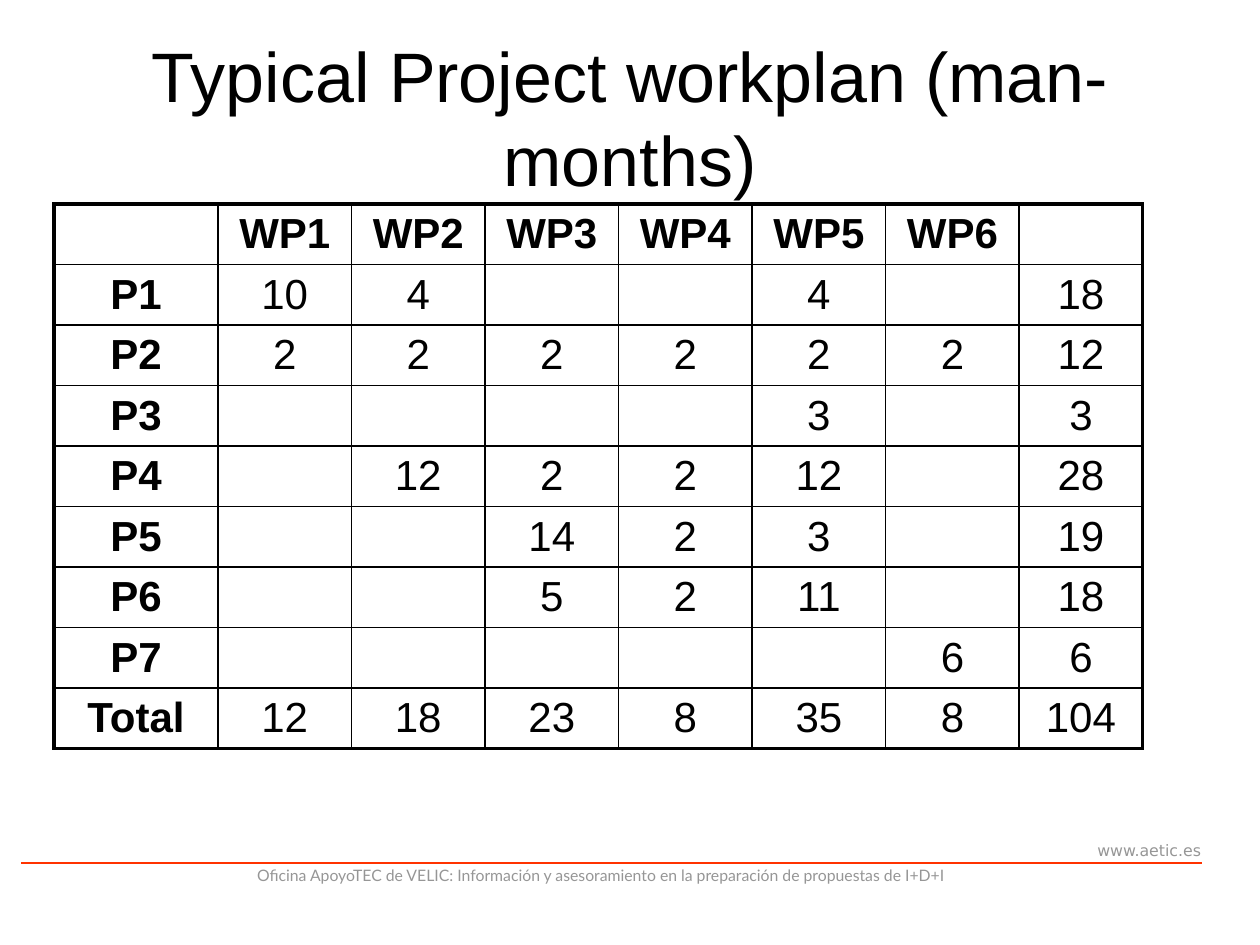
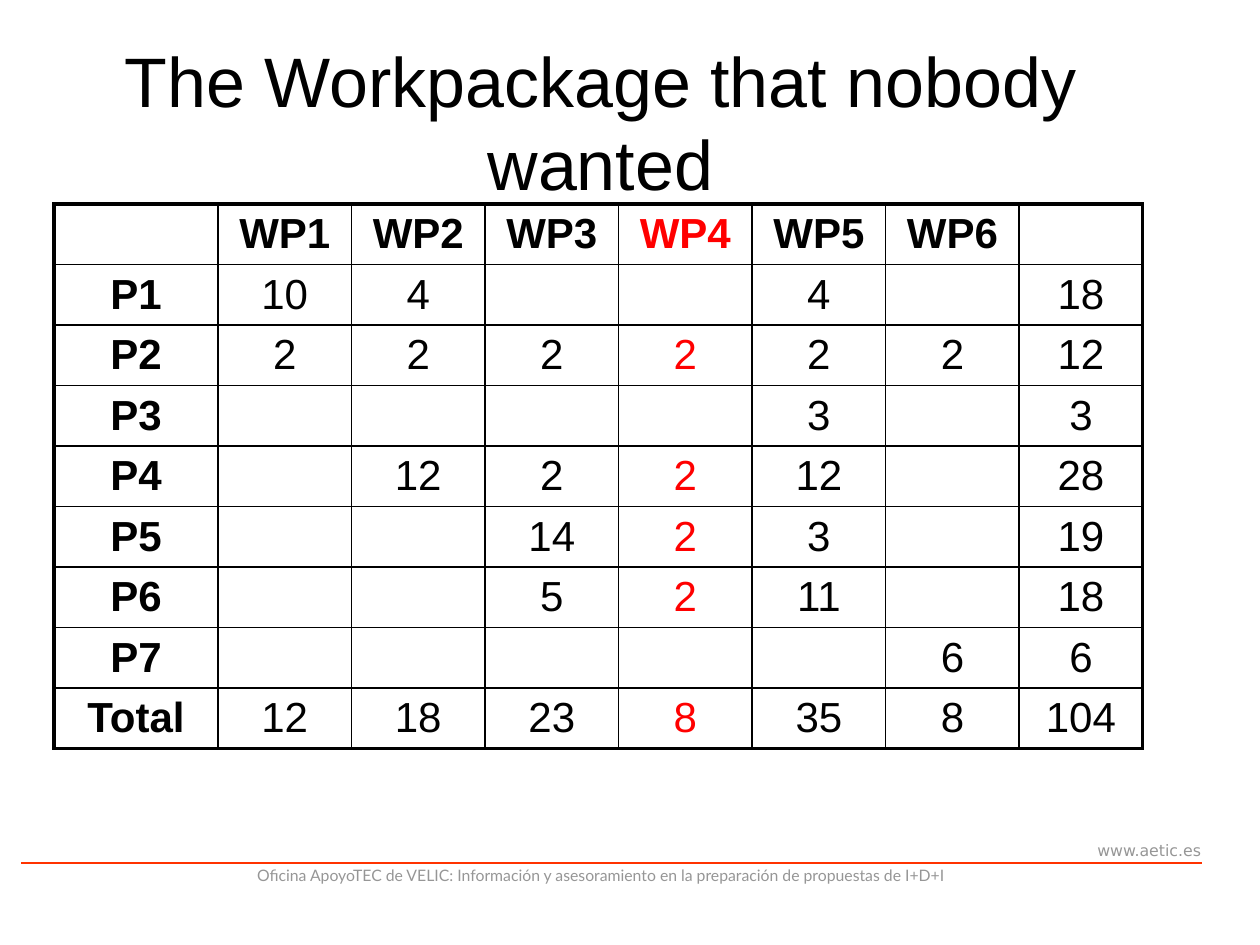
from lxml import etree
from pptx import Presentation
from pptx import util as u
from pptx.dml.color import RGBColor
from pptx.enum import shapes, text
from pptx.oxml.ns import qn

COLORS = {"ink": "000000", "highlight": "FF0000", "footer": "969696", "rule": "FF3300"}
FOOTERS = [
    ("www.aetic.es", (7.99, 6.62, 1.64, 0.25), "DejaVu Sans", text.PP_ALIGN.RIGHT),
    ("Oficina ApoyoTEC de VELIC: Información y asesoramiento en la preparación de propuestas de I+D+I",
     (1.51, 6.82, 6.51, 0.25), "Lato", text.PP_ALIGN.CENTER),
]
SLIDES = [
    ("Typical Project workplan (man-months)", (0.5, 0.3, 9, 1.25), None),
    ("The Workpackage that nobody wanted", (0.75, 0.17, 8.03, 1.58), "WP4"),
]
WORKPLAN = [
    ["", "WP1", "WP2", "WP3", "WP4", "WP5", "WP6", ""],
    ["P1", 10, 4, "", "", 4, "", 18],
    ["P2", 2, 2, 2, 2, 2, 2, 12],
    ["P3", "", "", "", "", 3, "", 3],
    ["P4", "", 12, 2, 2, 12, "", 28],
    ["P5", "", "", 14, 2, 3, "", 19],
    ["P6", "", "", 5, 2, 11, "", 18],
    ["P7", "", "", "", "", "", 6, 6],
    ["Total", 12, 18, 23, 8, 35, 8, 104],
]
COLUMN_WIDTHS = [1.3] + [1.06] * 6 + [0.98]
ROW_HEIGHT = 0.47
INNER_BORDER, OUTER_BORDER = 1, 2.25


def write(frame, words, font_name, size, color, align=text.PP_ALIGN.CENTER, bold=False):
    frame.word_wrap = True
    para = frame.paragraphs[0]
    para.text = words
    para.alignment = align
    para.font.size = u.Pt(size)
    for span in para.runs:
        span.font.name = font_name
        span.font.size = u.Pt(size)
        span.font.bold = bold
        span.font.color.rgb = RGBColor.from_string(COLORS[color])


def add_border(cell, side, points):
    properties = cell._tc.get_or_add_tcPr()
    line = etree.SubElement(properties, qn(f"a:ln{side}"), w=str(u.Pt(points)))
    fill = etree.SubElement(line, qn("a:solidFill"))
    etree.SubElement(fill, qn("a:srgbClr"), val=COLORS["ink"])


deck = Presentation()
deck.slide_width, deck.slide_height = u.Inches(10), u.Inches(7.5)

for title, title_area, highlighted in SLIDES:
    page = deck.slides.add_slide(deck.slide_layouts[6])

    rule = page.shapes.add_connector(
        shapes.MSO_CONNECTOR.STRAIGHT, u.Inches(0.17), u.Inches(6.85), u.Inches(9.54), u.Inches(6.85))
    rule.line.color.rgb = RGBColor.from_string(COLORS["rule"])
    rule.line.width = u.Pt(0.75)
    etree.SubElement(rule._element.spPr, qn("a:effectLst"))

    for words, area, font_name, align in FOOTERS:
        box = page.shapes.add_textbox(*map(u.Inches, area))
        write(box.text_frame, words, font_name, 9, "footer", align)

    box = page.shapes.add_textbox(*map(u.Inches, title_area))
    box.text_frame.vertical_anchor = text.MSO_ANCHOR.MIDDLE
    write(box.text_frame, title, "Arial", 40, "ink")

    last_row, last_column = len(WORKPLAN) - 1, len(COLUMN_WIDTHS) - 1
    table = page.shapes.add_table(
        len(WORKPLAN), len(COLUMN_WIDTHS), u.Inches(0.43), u.Inches(1.62),
        u.Inches(sum(COLUMN_WIDTHS)), u.Inches(ROW_HEIGHT * len(WORKPLAN))).table
    table.first_row = table.horz_banding = False
    for column, width in zip(table.columns, COLUMN_WIDTHS):
        column.width = u.Inches(width)

    for r, values in enumerate(WORKPLAN):
        table.rows[r].height = u.Inches(ROW_HEIGHT)
        for c, value in enumerate(values):
            cell = table.cell(r, c)
            cell.margin_top = cell.margin_bottom = u.Inches(0.04)
            cell.vertical_anchor = text.MSO_ANCHOR.MIDDLE
            color = "highlight" if WORKPLAN[0][c] == highlighted else "ink"
            write(cell.text_frame, str(value), "Arial", 24, color, bold=r == 0 or c == 0)
            edges = {"L": c == 0, "R": c == last_column, "T": r == 0, "B": r == last_row}
            for side, is_outer in edges.items():
                add_border(cell, side, OUTER_BORDER if is_outer else INNER_BORDER)
            cell.fill.background()

deck.save("out.pptx")
